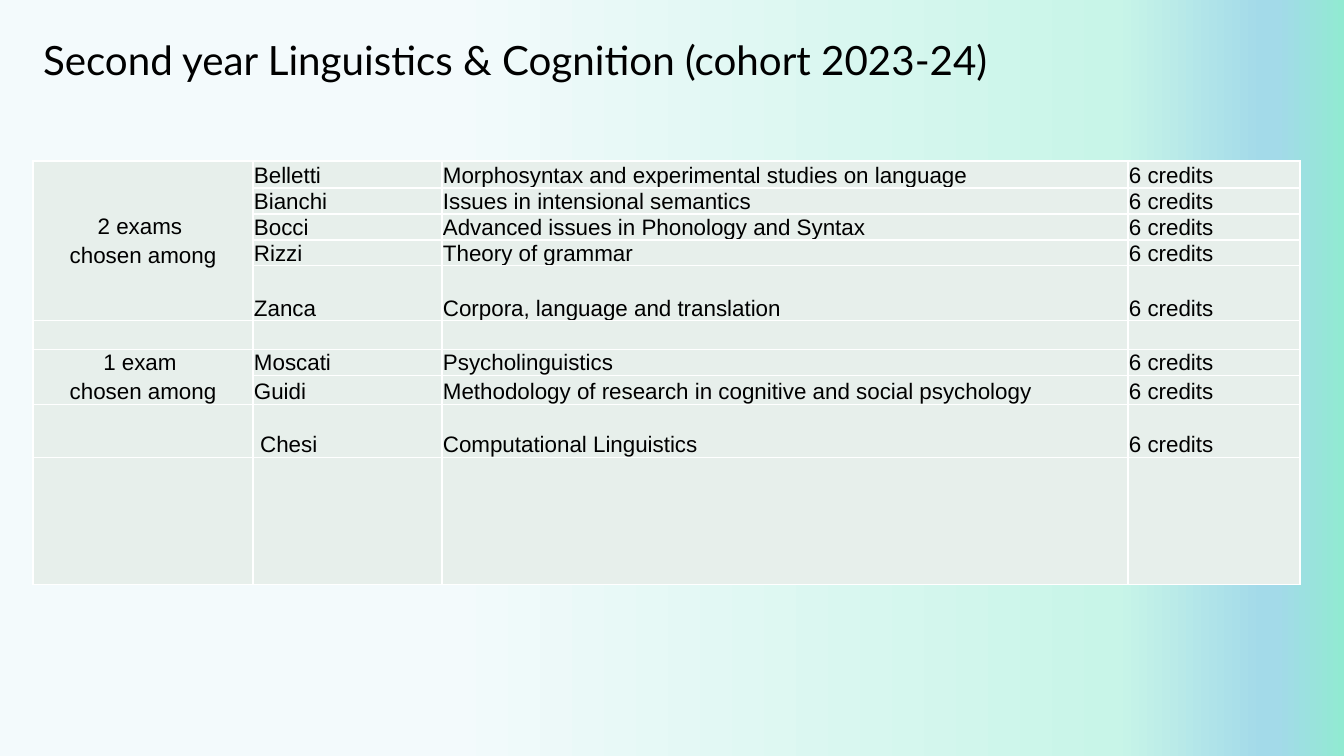
from lxml.etree import SubElement
from pptx import Presentation
from pptx.dml.color import RGBColor
from pptx.enum.text import MSO_ANCHOR, PP_ALIGN
from pptx.oxml.ns import qn
from pptx.util import Emu, Pt

TITLE = "Second year Linguistics & Cognition (cohort 2023-24)"
CREDITS = "6 credits"
ROWS = [
    (27, "Belletti", "Morphosyntax and experimental studies on language"),
    (26, "Bianchi", "Issues in intensional semantics"),
    (26, "Bocci", "Advanced issues in Phonology and Syntax"),
    (25, "Rizzi", "Theory of grammar"),
    (55, "Zanca", "Corpora, language and translation"),
    (28, "", ""),
    (26, "Moscati", "Psycholinguistics"),
    (29, "Guidi", "Methodology of research in cognitive and social psychology"),
    (53, " Chesi", "Computational Linguistics"),
    (127, "", ""),
]
GROUPS = {0: (4, "2 exams \nchosen among"), 6: (7, "1 exam \nchosen among")}
COLUMNS = [220, 189, 686, 172]
COLORS = {"text": "000000", "cell": "E7EFEB", "border": "FFFFFF"}
GRADIENT = [(0, "F3FAFC"), (33, "F3FAFC"), (83, "C8F5E8"),
            (94, "A3DAE9"), (95, "A3DAE9"), (100, "91EAD2")]
TITLE_FONT = {"name": "Lato", "size": Pt(28.8), "bold": False}
CELL_FONT = {"name": "Arial", "size": Pt(16), "bold": False}
CELL_MARGINS = {"margin_left": 1, "margin_top": 1, "margin_right": 1, "margin_bottom": 0}
TITLE_MARGINS = {"margin_left": 10, "margin_top": 0, "margin_right": 10, "margin_bottom": 5}


def px(n):
    return Emu(round(n * 914400 / 100.8))


def set_attrs(obj, values):
    for name, value in values.items():
        setattr(obj, name, value)


def set_margins(obj, margins):
    set_attrs(obj, {name: px(n) for name, n in margins.items()})


def set_font(font, values):
    set_attrs(font, values)
    font.color.rgb = RGBColor.from_string(COLORS["text"])


def paint_background(s):
    fill = s.background.fill
    fill.gradient()
    fill.gradient_angle = 0
    stops = s.element.find(".//" + qn("a:gsLst"))
    for gs in list(stops):
        stops.remove(gs)
    for pos, color in GRADIENT:
        gs = SubElement(stops, qn("a:gs"), pos=str(pos * 1000))
        SubElement(gs, qn("a:srgbClr"), val=color)


def add_title(s):
    sp = s.shapes.title
    set_attrs(sp, {"left": px(33), "top": px(41), "width": px(1236), "height": px(87)})
    tf = sp.text_frame
    set_margins(tf, TITLE_MARGINS)
    set_attrs(tf, {"word_wrap": True, "vertical_anchor": MSO_ANCHOR.TOP})
    p = tf.paragraphs[0]
    set_attrs(p, {"alignment": PP_ALIGN.LEFT, "line_spacing": 0.9})
    r = p.add_run()
    r.text = TITLE
    set_font(r.font, TITLE_FONT)


def style_cell(cell):
    tcPr = cell._tc.get_or_add_tcPr()
    for side in ("lnL", "lnR", "lnT", "lnB"):
        ln = SubElement(tcPr, qn("a:" + side), w=str(Pt(1)))
        SubElement(SubElement(ln, qn("a:solidFill")), qn("a:srgbClr"), val=COLORS["border"])
    cell.fill.solid()
    cell.fill.fore_color.rgb = RGBColor.from_string(COLORS["cell"])
    set_margins(cell, CELL_MARGINS)
    cell.vertical_anchor = MSO_ANCHOR.BOTTOM


def write_cell(cell, text, align=PP_ALIGN.LEFT):
    cell.text = text
    for i, p in enumerate(cell.text_frame.paragraphs):
        set_attrs(p, {"alignment": align, "space_before": Pt(3 if i else 0)})
        for r in p.runs:
            set_font(r.font, CELL_FONT)
        if not p.runs:
            SubElement(p._p, qn("a:endParaRPr"), sz="1600")


def add_courses(s):
    width, height = sum(COLUMNS), sum(row[0] for row in ROWS)
    table = s.shapes.add_table(len(ROWS), len(COLUMNS), px(33), px(161),
                               px(width), px(height)).table
    set_attrs(table, {"first_row": False, "horz_banding": False})
    for col, w in zip(table.columns, COLUMNS):
        col.width = px(w)
    for i, (h, teacher, course) in enumerate(ROWS):
        table.rows[i].height = px(h)
        credits = CREDITS if course else ""
        for j, text in enumerate(["", teacher, course, credits]):
            style_cell(table.cell(i, j))
            write_cell(table.cell(i, j), text)
    for first, (last, label) in GROUPS.items():
        cell = table.cell(first, 0)
        cell.merge(table.cell(last, 0))
        write_cell(cell, label, PP_ALIGN.CENTER)
        cell.vertical_anchor = MSO_ANCHOR.MIDDLE


def main():
    prs = Presentation()
    set_attrs(prs, {"slide_width": px(1344), "slide_height": px(756)})
    s = prs.slides.add_slide(prs.slide_layouts[5])
    paint_background(s)
    add_title(s)
    add_courses(s)
    prs.save("out.pptx")


if __name__ == "__main__":
    main()
